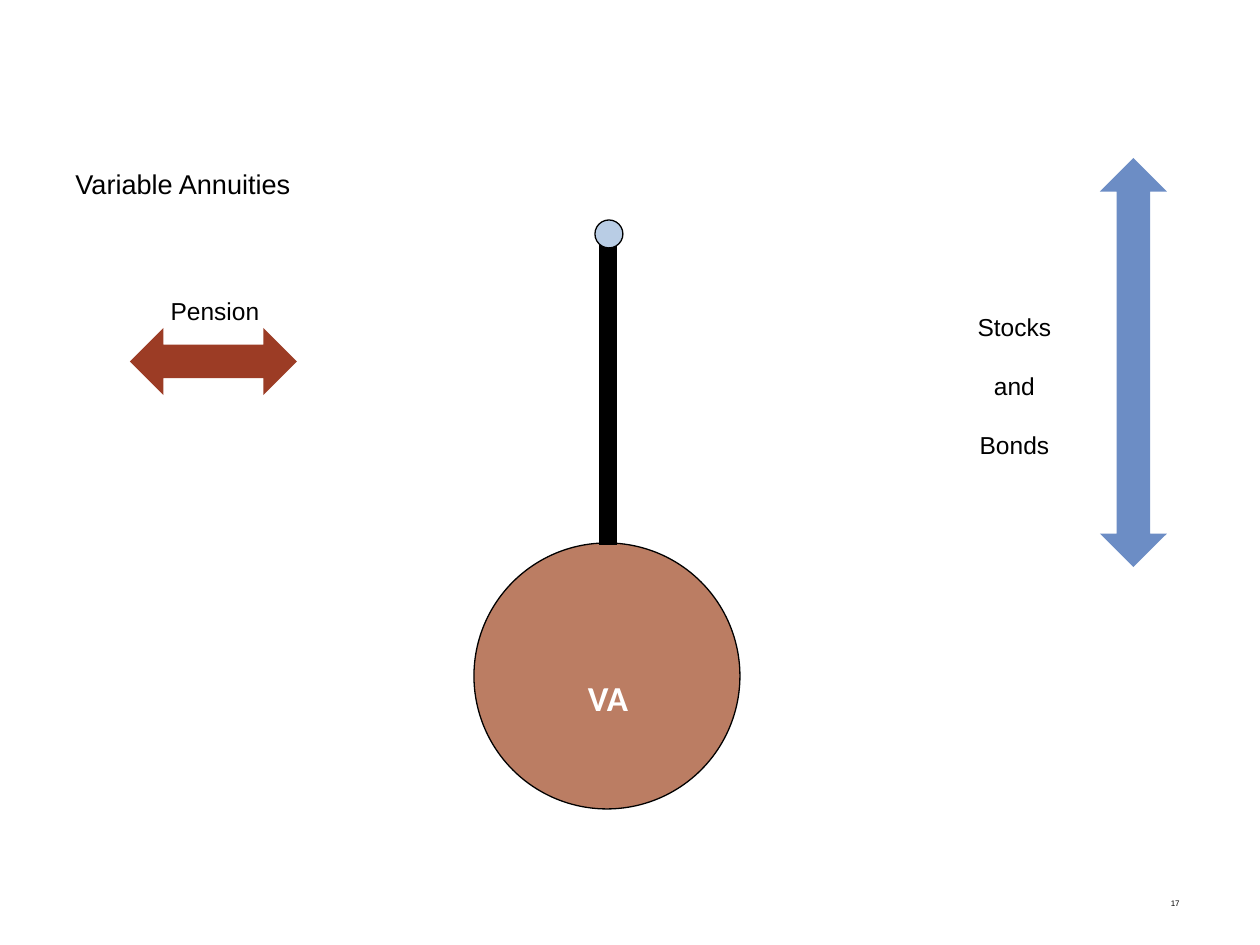
from dataclasses import dataclass

from lxml import etree
from pptx import Presentation
from pptx.dml.color import RGBColor
from pptx.enum.shapes import MSO_CONNECTOR, MSO_SHAPE
from pptx.enum.text import PP_ALIGN
from pptx.oxml.ns import qn
from pptx.util import Pt

OVAL = MSO_SHAPE.OVAL
ARROW = MSO_SHAPE.LEFT_RIGHT_ARROW
STRAIGHT = MSO_CONNECTOR.STRAIGHT
LEFT, MID, RIGHT = PP_ALIGN.LEFT, PP_ALIGN.CENTER, PP_ALIGN.RIGHT
PX = 914400 // 126  # EMU per px


@dataclass(frozen=True)
class Theme:
    ink: str = "000000"
    white: str = "FFFFFF"
    bob: str = "BB7D63"
    pivot: str = "B9CDE5"
    rust: str = "9C3C25"
    blue: str = "6C8DC5"
    font: str = "Arial"
    bold: str = "Calibri"
    title: float = 15.5
    label: float = 14
    mark: float = 20
    page: float = 4.6


THEME = Theme()


def emu(*nums):
    return [n * PX for n in nums]


def rgb(code):
    return RGBColor.from_string(code)


def add_text(slide, text, box, size, color=THEME.ink, font=THEME.font,
             bold=False, align=MID, top=6, gap=0):
    frame = slide.shapes.add_textbox(*emu(*box)).text_frame
    frame.word_wrap = True
    frame.margin_top = top * PX
    frame.text = text
    for i, para in enumerate(frame.paragraphs):
        para.alignment = align
        if i:
            para.space_before = Pt(gap)
        face = para.runs[0].font
        face.name, face.size, face.bold = font, Pt(size), bold
        face.color.rgb = rgb(color)


def add_form(slide, kind, box, fill, line=None, turn=0):
    form = slide.shapes.add_shape(kind, *emu(*box))
    form.shadow.inherit = False
    form.rotation = turn
    form.fill.solid()
    form.fill.fore_color.rgb = rgb(fill)
    if line:
        form.line.color.rgb = rgb(line)
        form.line.width = Pt(0.75)
    else:
        form.line.fill.background()


def add_rod(slide, ends, color, width):
    rod = slide.shapes.add_connector(STRAIGHT, *emu(*ends))
    rod.line.color.rgb = rgb(color)
    rod.line.width = Pt(width)
    etree.SubElement(rod._element.spPr, qn("a:effectLst"))


def main():
    deck = Presentation()
    deck.slide_width, deck.slide_height = emu(1260, 945)
    slide = deck.slides.add_slide(deck.slide_layouts[6])

    # Page number
    add_text(slide, "17", (898, 882, 294, 63), THEME.page, align=RIGHT, top=16)

    # Pendulum: bob, rod, pivot, label
    add_form(slide, OVAL, (474, 543, 266, 266), THEME.bob, THEME.ink)
    add_rod(slide, (608, 241, 608, 545), THEME.ink, 10)
    add_form(slide, OVAL, (595, 220, 28, 28), THEME.pivot, THEME.ink)
    add_text(slide, "VA", (518, 629, 180, 89), THEME.mark, THEME.white,
             THEME.bold, bold=True, top=48)

    # Small swing
    add_text(slide, "Pension", (0, 265, 430, 88), THEME.label, top=31)
    add_form(slide, ARROW, (130, 328, 167, 67), THEME.rust)

    # Large swing
    add_text(slide, "Stocks\nand\nBonds", (819, 275, 391, 165), THEME.label,
             top=37, gap=16.8)
    add_form(slide, ARROW, (929, 329, 409, 67), THEME.blue, turn=270)

    # Title
    add_text(slide, "Variable Annuities", (63, 126, 701, 81), THEME.title,
             align=LEFT, top=41)

    deck.save("out.pptx")


if __name__ == "__main__":
    main()
